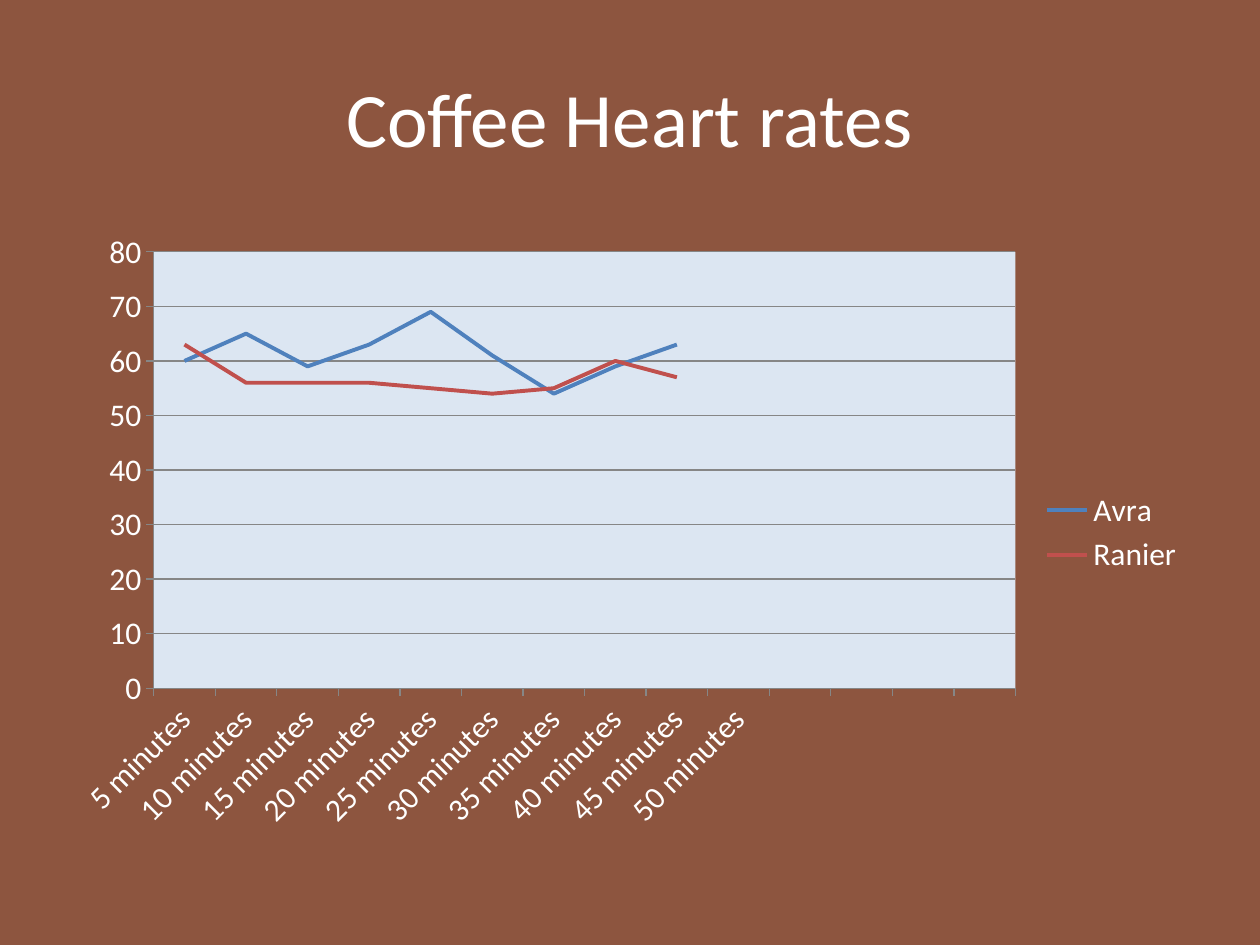
from lxml import etree
from pptx import Presentation
from pptx.chart.data import CategoryChartData
from pptx.dml.color import RGBColor
from pptx.enum.chart import XL_CHART_TYPE, XL_LEGEND_POSITION, XL_TICK_MARK
from pptx.enum.text import MSO_ANCHOR, PP_ALIGN
from pptx.oxml import parse_xml
from pptx.oxml.ns import nsdecls, qn
from pptx.util import Cm, Pt

LINE_CHART = XL_CHART_TYPE.LINE
LEGEND_RIGHT = XL_LEGEND_POSITION.RIGHT
TICK_OUTSIDE = XL_TICK_MARK.OUTSIDE
MIDDLE = MSO_ANCHOR.MIDDLE
CENTER = PP_ALIGN.CENTER

BROWN = RGBColor(0x8D, 0x55, 0x3F)
WHITE = RGBColor(0xFF, 0xFF, 0xFF)
GRAY = RGBColor(0x86, 0x86, 0x86)
PALE_BLUE = RGBColor(0xDC, 0xE6, 0xF2)
BLUE = RGBColor(0x4F, 0x81, 0xBD)
RED = RGBColor(0xC0, 0x50, 0x4D)
FONT = "Calibri"

UNUSED_SLOTS = 4
TIMES = [f"{minutes} minutes" for minutes in range(5, 55, 5)]
HEART_RATES = {
    "Avra": ([60, 65, 59, 63, 69, 61, 54, 59, 63], BLUE),
    "Ranier": ([63, 56, 56, 56, 55, 54, 55, 60, 57], RED),
}


def style_font(font, size):
    font.name = FONT
    font.size = Pt(size)
    font.color.rgb = WHITE


def add_title(page, left, top, width, height):
    title = page.shapes.title
    title.left, title.top, title.width, title.height = left, top, width, height
    frame = title.text_frame
    frame.text = "Coffee Heart rates"
    frame.vertical_anchor = MIDDLE
    para = frame.paragraphs[0]
    para.alignment = CENTER
    style_font(para.runs[0].font, 44)


def format_plot_area(chart, x, y, width, height):
    """Place the inner plot area, in fractions of the chart, and fill it."""
    plot_area = chart.plots[0]._element.getparent()
    for old in plot_area.findall(qn("c:layout")):
        plot_area.remove(old)
    layout = parse_xml(f"<c:layout {nsdecls('c')}><c:manualLayout/></c:layout>")
    settings = {"layoutTarget": "inner", "xMode": "edge", "yMode": "edge",
                "x": x, "y": y, "w": width, "h": height}
    for name, value in settings.items():
        etree.SubElement(layout[0], qn(f"c:{name}")).set("val", str(value))
    plot_area.insert(0, layout)
    plot_area.append(parse_xml(
        f"<c:spPr {nsdecls('c', 'a')}><a:solidFill>"
        f'<a:srgbClr val="{PALE_BLUE}"/></a:solidFill></c:spPr>'))


def add_heart_rate_chart(page, left, top, width, height):
    data = CategoryChartData()
    data.categories = TIMES + [""] * UNUSED_SLOTS
    for name, (rates, _) in HEART_RATES.items():
        gaps = [None] * (len(TIMES) + UNUSED_SLOTS - len(rates))
        data.add_series(name, rates + gaps)
    chart = page.shapes.add_chart(LINE_CHART, left, top, width, height, data).chart
    style_font(chart.font, 18)
    chart.has_title = False
    chart.has_legend = True
    chart.legend.position = LEGEND_RIGHT
    chart.legend.include_in_layout = False
    style_font(chart.legend.font, 18)

    for axis in (chart.category_axis, chart.value_axis):
        axis.major_tick_mark = TICK_OUTSIDE
        axis.format.line.color.rgb = GRAY
        style_font(axis.tick_labels.font, 18)
    value_axis = chart.value_axis
    value_axis.minimum_scale, value_axis.maximum_scale = 0, 80
    value_axis.major_unit = 10
    value_axis.has_major_gridlines = True
    value_axis.major_gridlines.format.line.color.rgb = GRAY

    chart.plots[0].vary_by_categories = False
    for series, (_, color) in zip(chart.plots[0].series, HEART_RATES.values()):
        series.smooth = False
        series.format.line.color.rgb = color
        series.format.line.width = Pt(2.25)
    format_plot_area(chart, 0.08, 0.05, 0.76, 0.7)


def main():
    deck = Presentation()
    deck.slide_width, deck.slide_height = Cm(25.4), Cm(19.05)
    page = deck.slides.add_slide(deck.slide_layouts[5])
    page.background.fill.solid()
    page.background.fill.fore_color.rgb = BROWN
    margin = Cm(1.27)
    width = deck.slide_width - 2 * margin
    add_title(page, margin, Cm(0.76), width, Cm(3.18))
    add_heart_rate_chart(page, margin, Cm(4.45), width, Cm(12.57))
    deck.save("out.pptx")


if __name__ == "__main__":
    main()
